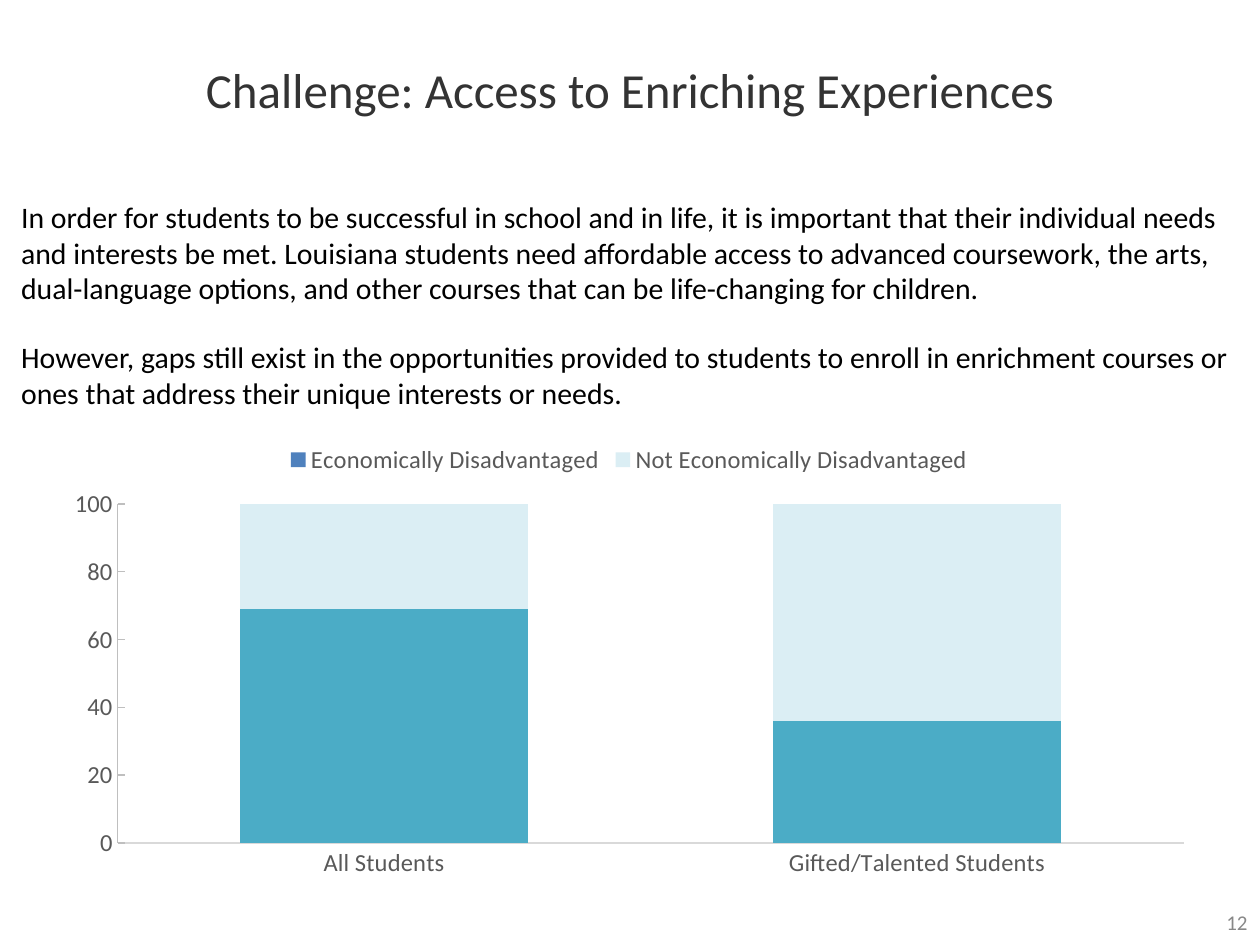
from pptx import Presentation
from pptx.chart.data import CategoryChartData
from pptx.dml.color import RGBColor
from pptx.enum import chart as kinds, text
from pptx.util import Pt

FONT = "Calibri"
COLORS = {
    "title": "333333",
    "body": "000000",
    "number": "888888",
    "label": "595959",
    "category_line": "D9D9D9",
    "value_line": "BFBFBF",
    "legend_key": "4F81BD",
    "disadvantaged": "4BACC6",
    "not_disadvantaged": "DBEEF4",
}
BODY = [
    "In order for students to be successful in school and in life, it is important that "
    "their individual needs and interests be met. Louisiana students need affordable access "
    "to advanced coursework, the arts, dual-language options, and other courses that can be "
    "life-changing for children.",
    "However, gaps still exist in the opportunities provided to students to enroll in "
    "enrichment courses or ones that address their unique interests or needs.",
]


def color(name):
    return RGBColor.from_string(COLORS[name])


def style_font(font, size, name):
    font.name = FONT
    font.size = Pt(size)
    font.color.rgb = color(name)


def fill_solid(part, name):
    part.format.fill.solid()
    part.format.fill.fore_color.rgb = color(name)


def add_text(page, area, lines, size, name, align=text.PP_ALIGN.LEFT,
             anchor=text.MSO_ANCHOR.TOP, gap=0):
    box = page.shapes.add_textbox(*map(Pt, area))
    frame = box.text_frame
    frame.word_wrap = True
    frame.vertical_anchor = anchor
    for index, line in enumerate(lines):
        para = frame.add_paragraph() if index else frame.paragraphs[0]
        para.text = line
        para.alignment = align
        para.space_before = Pt(gap if index else 0)
        style_font(para.font, size, name)


def style_axis(axis, tick, line):
    axis.has_major_gridlines = False
    axis.major_tick_mark = tick
    axis.minor_tick_mark = kinds.XL_TICK_MARK.NONE
    axis.format.line.color.rgb = color(line)
    axis.format.line.width = Pt(0.75)
    style_font(axis.tick_labels.font, 14, "label")


def add_enrollment_chart(page, area):
    data = CategoryChartData()
    data.categories = ["All Students", "Gifted/Talented Students"]
    data.add_series("Economically Disadvantaged", [69, 36])
    data.add_series("Not Economically Disadvantaged", [31, 64])
    chart = page.shapes.add_chart(
        kinds.XL_CHART_TYPE.COLUMN_STACKED, *map(Pt, area), data).chart
    style_font(chart.font, 14, "body")
    chart.has_title = False
    chart.has_legend = True
    chart.legend.position = kinds.XL_LEGEND_POSITION.TOP
    chart.legend.include_in_layout = False
    style_font(chart.legend.font, 14, "label")

    style_axis(chart.category_axis, kinds.XL_TICK_MARK.NONE, "category_line")
    values = chart.value_axis
    style_axis(values, kinds.XL_TICK_MARK.INSIDE, "value_line")
    values.minimum_scale = 0
    values.maximum_scale = 100
    values.major_unit = 20

    plot = chart.plots[0]
    plot.vary_by_categories = False
    plot.gap_width = 85
    plot.overlap = 100
    disadvantaged, others = plot.series
    fill_solid(disadvantaged, "legend_key")
    fill_solid(others, "not_disadvantaged")
    for index in range(2):
        fill_solid(disadvantaged.points[index], "disadvantaged")


def main():
    deck = Presentation()
    deck.slide_width, deck.slide_height = Pt(720), Pt(540)
    page = deck.slides.add_slide(deck.slide_layouts[6])
    add_text(page, (0, 0, 720, 102), ["Challenge: Access to Enriching Experiences"],
             28, "title", text.PP_ALIGN.CENTER, text.MSO_ANCHOR.MIDDLE)
    add_text(page, (5, 110, 709, 128), BODY, 17, "body", gap=19)
    add_enrollment_chart(page, (29.5, 246, 660, 261))
    add_text(page, (552, 516, 168, 26.5), ["12"], 12, "number", text.PP_ALIGN.RIGHT)
    deck.save("out.pptx")


if __name__ == "__main__":
    main()
